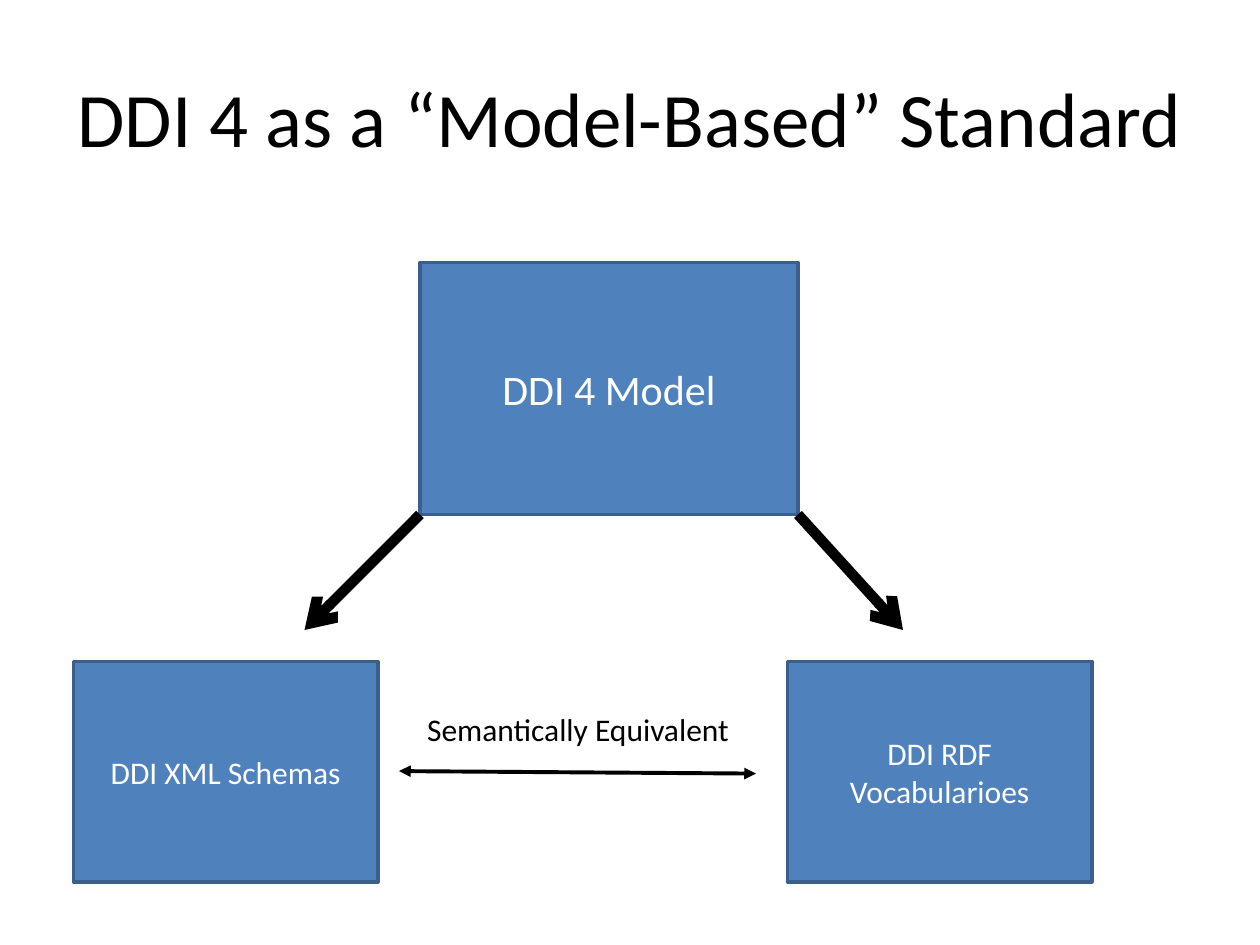
import pptx
import pptx.util
import pptx.dml.color
import pptx.enum.shapes
import pptx.enum.text
import pptx.oxml
import pptx.oxml.ns
from lxml import etree

RGBColor = pptx.dml.color.RGBColor
BLACK = RGBColor(0x00, 0x00, 0x00)
WHITE = RGBColor(0xFF, 0xFF, 0xFF)
BLUE = RGBColor(0x4F, 0x81, 0xBD)
BLUE_EDGE = RGBColor(0x3A, 0x5F, 0x8C)
FONT = "Calibri"
COLS, ROWS = 120, 90
UNIT = pptx.util.Inches(10) / COLS
ALIGN = pptx.enum.text.PP_ALIGN
ANCHOR = pptx.enum.text.MSO_ANCHOR


def grid(*cells):
    """Convert grid columns and rows to slide lengths."""
    return [pptx.util.Emu(round(c * UNIT)) for c in cells]


def write(tf, text, size=18, color=BLACK, align=ALIGN.CENTER,
          anchor=ANCHOR.MIDDLE, wrap=True):
    """Put one formatted paragraph into a text frame."""
    tf.word_wrap = wrap
    tf.vertical_anchor = anchor
    p = tf.paragraphs[0]
    p.alignment = align
    r = p.add_run()
    r.text = text
    r.font.size = pptx.util.Pt(size)
    r.font.name = FONT
    r.font.color.rgb = color


def add_title(s, box, text):
    """Place and fill the title placeholder."""
    sp = s.shapes.title
    sp.left, sp.top, sp.width, sp.height = grid(*box)
    write(sp.text_frame, text, size=44)


def add_block(s, box, text, size=18):
    """Draw a labelled blue rectangle."""
    sp = s.shapes.add_shape(pptx.enum.shapes.MSO_SHAPE.RECTANGLE, *grid(*box))
    sp.shadow.inherit = False
    sp.fill.solid()
    sp.fill.fore_color.rgb = BLUE
    sp.line.color.rgb = BLUE_EDGE
    sp.line.width = pptx.util.Pt(2)
    write(sp.text_frame, text, size=size, color=WHITE)


def add_arrow(s, start, end, width, **ends):
    """Draw a black line with the given headEnd and tailEnd types."""
    sp = s.shapes.add_connector(
        pptx.enum.shapes.MSO_CONNECTOR.STRAIGHT, *grid(*start, *end))
    sp.line.color.rgb = BLACK
    sp.line.width = pptx.util.Pt(width)
    qn = pptx.oxml.ns.qn
    ln = sp.line._get_or_add_ln()
    for name, kind in ends.items():
        etree.SubElement(ln, qn("a:" + name), type=kind)
    etree.SubElement(sp._element.spPr, qn("a:effectLst"))


def add_model(s, box, targets):
    """Draw the model block and an arrow from each bottom corner."""
    left, top, width, height = box
    add_block(s, box, "DDI 4 Model", size=24)
    for x, target in zip((left, left + width), targets):
        add_arrow(s, (x, top + height), target, 6, tailEnd="arrow")


def add_bindings(s, box, block_width):
    """Draw the two bindings at the ends of a row and their equivalence."""
    left, top, width, height = box
    labels = ("DDI XML Schemas", "DDI RDF Vocabularioes")
    for x, text in zip((left, left + width - block_width), labels):
        add_block(s, (x, top, block_width, height), text)
    middle = top + height / 2
    add_arrow(s, (left + block_width + 2, middle - 0.06),
              (left + width - block_width - 3, middle + 0.18), 2.25,
              headEnd="triangle", tailEnd="triangle")
    sp = s.shapes.add_textbox(
        *grid(left + block_width + 3.5, top + 4, 31.5, 4.8))
    write(sp.text_frame, "Semantically Equivalent", align=ALIGN.LEFT,
          anchor=ANCHOR.TOP, wrap=False)
    sp.text_frame.auto_size = pptx.enum.text.MSO_AUTO_SIZE.SHAPE_TO_FIT_TEXT


def main():
    """Build and save the slide."""
    prs = pptx.Presentation()
    prs.slide_width, prs.slide_height = grid(COLS, ROWS)
    s = prs.slides.add_slide(prs.slide_layouts[5])
    add_title(s, (6, 3.6, 108, 15), "DDI 4 as a “Model-Based” Standard")
    add_model(s, (40, 25, 36, 24), ((29, 60), (86, 60)))
    add_bindings(s, (7, 63, 97, 21), block_width=29)
    prs.save("out.pptx")


if __name__ == "__main__":
    main()
